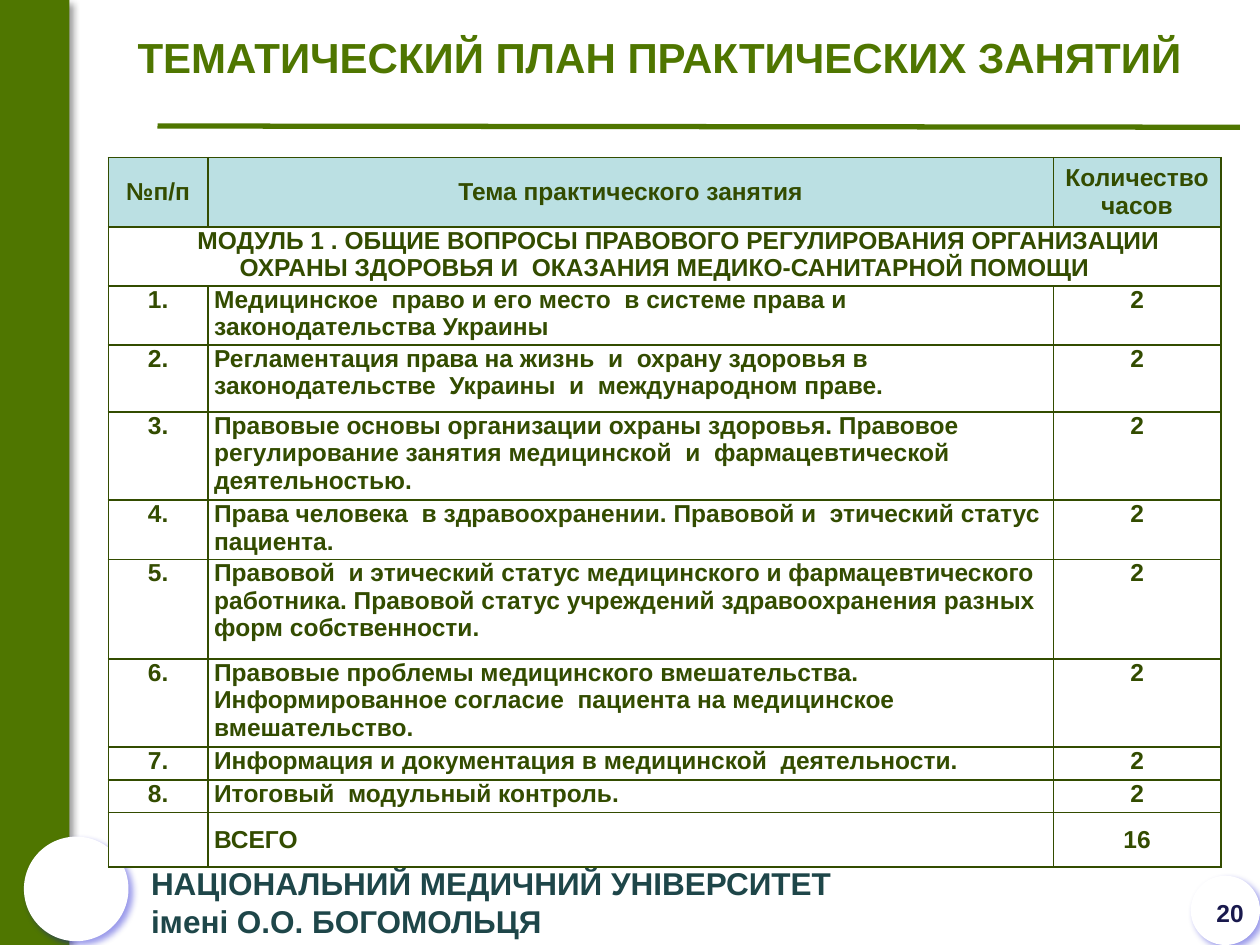
import pptx
import pptx.dml.color
import pptx.enum.shapes
import pptx.enum.text
import pptx.oxml
import pptx.oxml.ns
import pptx.util
from lxml import etree

Inches = pptx.util.Inches
Pt = pptx.util.Pt
ALIGN = pptx.enum.text.PP_ALIGN
ANCHOR = pptx.enum.text.MSO_ANCHOR
SHAPE = pptx.enum.shapes.MSO_SHAPE

COLORS = {
    "green": "4F7600", "grid": "334C00", "header": "BBE0E3", "white": "FFFFFF",
    "teal": "1E4649", "navy": "19194D", "black": "000000", "glow": "0000CC",
}
COLUMNS = [0.79, 6.71, 1.33]
ROWS = [0.55, 0.47, 0.47, 0.53, 0.7, 0.47, 0.79, 0.7, 0.26, 0.26, 0.43]
HEADERS = ["№п/п", "Тема практического занятия", "Количество часов"]
MODULE = ("МОДУЛЬ 1 . ОБЩИЕ ВОПРОСЫ ПРАВОВОГО РЕГУЛИРОВАНИЯ ОРГАНИЗАЦИИ "
          "ОХРАНЫ ЗДОРОВЬЯ И  ОКАЗАНИЯ МЕДИКО-САНИТАРНОЙ ПОМОЩИ")
TOPICS = [
    "Медицинское  право и его место  в системе права и законодательства Украины",
    "Регламентация права на жизнь  и  охрану здоровья в законодательстве  Украины  и  "
    "международном праве.",
    "Правовые основы организации охраны здоровья. Правовое регулирование занятия "
    "медицинской  и  фармацевтической деятельностью.",
    "Права человека  в здравоохранении. Правовой и  этический статус пациента.",
    "Правовой  и этический статус медицинского и фармацевтического работника. "
    "Правовой статус учреждений здравоохранения разных форм собственности.",
    "Правовые проблемы медицинского вмешательства. Информированное согласие  пациента "
    "на медицинское вмешательство.",
    "Информация и документация в медицинской  деятельности.",
    "Итоговый  модульный контроль.",
]
HOURS = 2


def rgb(color):
    """Return the named colour."""
    return pptx.dml.color.RGBColor.from_string(COLORS[color])


def write(frame, lines, size, color, align=ALIGN.LEFT, anchor=ANCHOR.TOP):
    """Fill a text frame with bold lines in one format."""
    frame.word_wrap = True
    frame.vertical_anchor = anchor
    frame.text = "\n".join(lines)
    for paragraph in frame.paragraphs:
        paragraph.alignment = align
        for span in paragraph.runs:
            for name, value in {"name": "Arial", "size": Pt(size), "bold": True}.items():
                setattr(span.font, name, value)
            span.font.color.rgb = rgb(color)


def add_shadowed(page, kind, box, fill, shadow):
    """Add a borderless shape with a soft shadow."""
    shape = page.shapes.add_shape(kind, *map(Inches, box))
    shape.fill.solid()
    shape.fill.fore_color.rgb = rgb(fill)
    shape.line.fill.background()
    shape.shadow.inherit = False
    effects = shape.element.spPr.find(pptx.oxml.ns.qn("a:effectLst"))
    effects.append(pptx.oxml.parse_xml(
        f'<a:outerShdw {pptx.oxml.ns.nsdecls("a")} blurRad="{Pt(4)}" dist="{Pt(3)}" '
        f'dir="2700000" algn="tl" rotWithShape="0"><a:srgbClr val="{COLORS[shadow]}">'
        '<a:alpha val="40000"/></a:srgbClr></a:outerShdw>'))


def add_text(page, box, lines, size, color, align=ALIGN.LEFT):
    """Add a text box."""
    label = page.shapes.add_textbox(*map(Inches, box))
    write(label.text_frame, lines, size, color, align)


def add_title(page, box):
    """Place the title and the rule below it."""
    left, top, width, height = box
    title = page.shapes.title
    for name, value in zip(("left", "top", "width", "height"), box):
        setattr(title, name, Inches(value))
    write(title.text_frame, ["ТЕМАТИЧЕСКИЙ ПЛАН ПРАКТИЧЕСКИХ ЗАНЯТИЙ"], 24, "green",
          ALIGN.CENTER, ANCHOR.MIDDLE)
    rule = page.shapes.add_connector(
        pptx.enum.shapes.MSO_CONNECTOR.STRAIGHT, Inches(left + 0.31), Inches(top + 0.8),
        Inches(left + width + 0.31), Inches(top + 0.81))
    rule.line.color.rgb = rgb("green")
    rule.line.width = Pt(3)
    etree.SubElement(rule.element.spPr, pptx.oxml.ns.qn("a:effectLst"))


def add_footer(page, box):
    """Place the emblem disc, the university name and the page number."""
    left, top, width, height = box
    add_shadowed(page, SHAPE.OVAL, (left, top, 0.83, 0.83), "white", "glow")
    add_text(page, (left + 0.91, top + 0.17, 8.05, 0.71),
             ["НАЦІОНАЛЬНИЙ МЕДИЧНИЙ УНІВЕРСИТЕТ", "імені О.О. БОГОМОЛЬЦЯ"], 18, "teal")
    add_shadowed(page, SHAPE.OVAL,
                 (left + width - 0.55, top + height - 0.55, 0.55, 0.55), "white", "glow")
    add_text(page, (left + width - 2.36, top + 0.44, 2.33, 0.52), ["20"], 14, "navy",
             ALIGN.RIGHT)


def style_cell(cell, fill):
    """Set the margins, borders and fill of a cell."""
    margins = {"margin_left": 0.05, "margin_right": 0.05, "margin_top": 0, "margin_bottom": 0}
    for name, value in margins.items():
        setattr(cell, name, Inches(value))
    properties = cell._tc.get_or_add_tcPr()
    for side in ("lnL", "lnR", "lnT", "lnB"):
        properties.append(pptx.oxml.parse_xml(
            f'<a:{side} {pptx.oxml.ns.nsdecls("a")} w="{Pt(1)}"><a:solidFill>'
            f'<a:srgbClr val="{COLORS["grid"]}"/></a:solidFill></a:{side}>'))
    cell.fill.solid()
    cell.fill.fore_color.rgb = rgb(fill)


def add_plan(page, box):
    """Place the table of topics and hours."""
    lessons = [[f"{number}.", topic, str(HOURS)] for number, topic in enumerate(TOPICS, 1)]
    total = ["", "ВСЕГО", str(HOURS * len(TOPICS))]
    rows = [HEADERS, [MODULE, "", ""], *lessons, total]
    table = page.shapes.add_table(len(rows), len(COLUMNS), *map(Inches, box)).table
    for column, width in zip(table.columns, COLUMNS):
        column.width = Inches(width)
    for row, height in zip(table.rows, ROWS):
        row.height = Inches(height)
    for r, texts in enumerate(rows):
        centred = r in (0, len(rows) - 1)
        for c, text in enumerate(texts):
            cell = table.cell(r, c)
            style_cell(cell, "header" if r == 0 else "white")
            align = ALIGN.LEFT if c == 1 and r > 0 else ALIGN.CENTER
            write(cell.text_frame, [text], 14, "grid", align)
            cell.vertical_anchor = ANCHOR.MIDDLE if centred else ANCHOR.TOP
    module = table.cell(1, 0)
    module.merge(table.cell(1, len(COLUMNS) - 1))
    module.text_frame.paragraphs[0]._p.get_or_add_pPr().set("indent", str(Inches(0.22)))


def main():
    """Build the slide and save it."""
    deck = pptx.Presentation()
    deck.slide_width, deck.slide_height = Inches(10), Inches(7.5)
    page = deck.slides.add_slide(deck.slide_layouts[5])
    add_shadowed(page, SHAPE.RECTANGLE, (0, 0, 0.55, 7.5), "green", "black")
    add_title(page, (0.94, 0.2, 8.59, 0.5))
    add_footer(page, (0.19, 6.64, 9.81, 0.86))
    add_plan(page, (0.86, 1.25, sum(COLUMNS), sum(ROWS)))
    deck.save("out.pptx")


if __name__ == "__main__":
    main()
